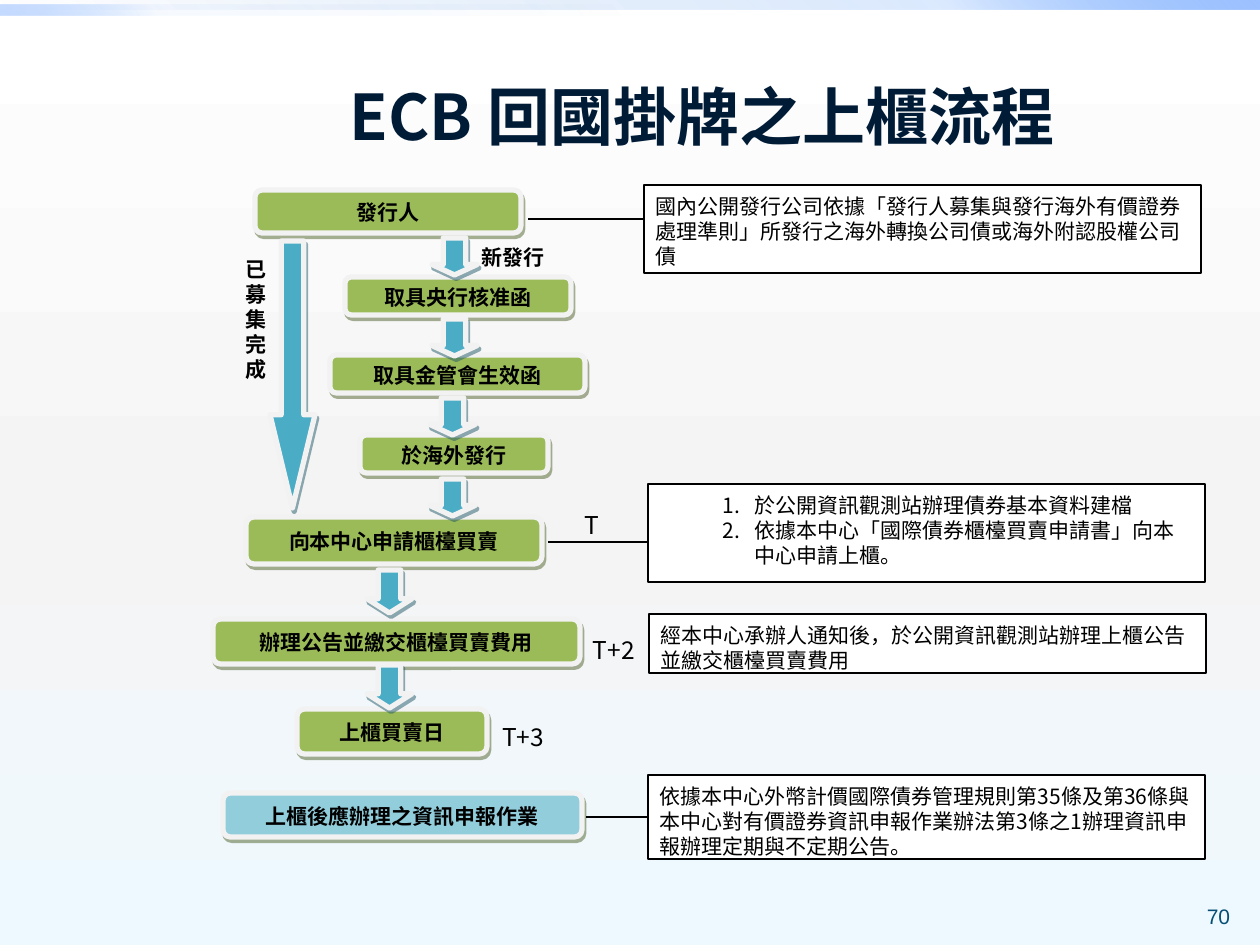
import dataclasses

import lxml.etree
import pptx
import pptx.dml.color
import pptx.enum.shapes
import pptx.enum.text
import pptx.oxml.ns
import pptx.util

SHAPE = pptx.enum.shapes.MSO_SHAPE
ALIGN = pptx.enum.text.PP_ALIGN
ANCHOR = pptx.enum.text.MSO_ANCHOR
qn = pptx.oxml.ns.qn


@dataclasses.dataclass(frozen=True)
class Theme:
    font: str = "Noto Sans CJK SC"
    number_font: str = "Arial"
    title_size: int = 36
    body_size: int = 12
    day_size: int = 14
    line_ratio: float = 1.19
    title: str = "001B36"
    number: str = "064E74"
    ink: str = "000000"
    paper: str = "FFFFFF"
    step: str = "9BBB59"
    follow_up: str = "92CDDC"
    arrow: str = "4BACC6"
    rim: str = "F2F2F2"
    step_shadow: str = "4E6128"
    arrow_shadow: str = "205867"
    backdrop: tuple = ((0, "FFFFFF", 100), (55, "F4F4F4", 100), (100, "EEF9FF", 100))
    top_band: tuple = ((0, "0058B7", 0), (75, "4F95FF", 20), (100, "9EC2FF", 100))
    left_band: tuple = ((0, "0058B7", 0), (75, "4F95FF", 5), (100, "9EC2FF", 60))


THEME = Theme()


def px(length):
    return round(length * 914400 / 126)


def place(*lengths):
    return [px(length) for length in lengths]


def rgb(code):
    return pptx.dml.color.RGBColor.from_string(code)


def add_node(parent, tag, **attributes):
    node = lxml.etree.SubElement(parent, qn(tag))
    for name, value in attributes.items():
        node.set(name, str(value))
    return node


def add_color(parent, code, opacity):
    color = add_node(parent, "a:srgbClr", val=code)
    if opacity < 100:
        add_node(color, "a:alpha", val=opacity * 1000)


def set_gradient(fill, owner, stops, angle):
    fill.gradient()
    gradient = owner.find(".//" + qn("a:gradFill"))
    for child in list(gradient):
        gradient.remove(child)
    stop_list = add_node(gradient, "a:gsLst")
    for position, code, opacity in stops:
        add_color(add_node(stop_list, "a:gs", pos=position * 1000), code, opacity)
    add_node(gradient, "a:lin", ang=angle * 60000, scaled=0)


def set_shadow(shape, code):
    shape.shadow.inherit = False
    effects = shape._element.spPr.find(qn("a:effectLst"))
    shadow = add_node(effects, "a:outerShdw", blurRad=0, dist=pptx.util.Pt(2.2),
                      dir=63 * 60000, algn="ctr", rotWithShape=0)
    add_color(shadow, code, 50)


def write(frame, text, size=THEME.body_size, color=THEME.ink, font=THEME.font, bold=False,
          align=ALIGN.LEFT, anchor=ANCHOR.TOP, top=9, bottom=6, fixed=True, numbered=False):
    frame.word_wrap = True
    frame.vertical_anchor = anchor
    frame.margin_left = frame.margin_right = px(12)
    frame.margin_top, frame.margin_bottom = px(top), px(bottom)
    for index, line in enumerate(text.split("\n")):
        para = frame.add_paragraph() if index else frame.paragraphs[0]
        para.alignment = align
        if fixed:
            para.line_spacing = pptx.util.Pt(size * THEME.line_ratio)
        if numbered:
            para.level = 1
            properties = para._p.get_or_add_pPr()
            properties.set("marL", str(pptx.util.Inches(0.75)))
            properties.set("indent", str(pptx.util.Inches(-0.25)))
            add_node(properties, "a:buFont", typeface="+mj-lt")
            add_node(properties, "a:buAutoNum", type="arabicPeriod")
        span = para.add_run()
        span.text = line
        span.font.size = pptx.util.Pt(size)
        span.font.bold = bold
        span.font.color.rgb = rgb(color)
        span.font.name = font
        add_node(span._r.get_or_add_rPr(), "a:ea", typeface=font)


def add_band(slide, bounds, stops, angle):
    band = slide.shapes.add_shape(SHAPE.RECTANGLE, *place(*bounds))
    band.shadow.inherit = False
    band.line.fill.background()
    set_gradient(band.fill, band._element.spPr, stops, angle)


def add_block(slide, preset, bounds, fill, line, width):
    block = slide.shapes.add_shape(preset, *place(*bounds))
    block.shadow.inherit = False
    block.fill.solid()
    block.fill.fore_color.rgb = rgb(fill)
    block.line.color.rgb = rgb(line)
    block.line.width = pptx.util.Pt(width)
    return block


def add_step(slide, text, bounds, fill=THEME.step):
    step = add_block(slide, SHAPE.ROUNDED_RECTANGLE, bounds, fill, THEME.rim, 3)
    set_shadow(step, THEME.step_shadow)
    write(step.text_frame, text, bold=True, align=ALIGN.CENTER, anchor=ANCHOR.MIDDLE,
          top=2, bottom=0)


def add_arrow(slide, left, top, height, head):
    arrow = add_block(slide, SHAPE.DOWN_ARROW, (left, top, 45, height),
                      THEME.arrow, THEME.rim, 3)
    arrow.adjustments[1] = head
    set_shadow(arrow, THEME.arrow_shadow)


def add_note(slide, text, left, top, height, numbered=False):
    note = add_block(slide, SHAPE.RECTANGLE, (left, top, 557, height),
                     THEME.paper, THEME.ink, 0.75)
    write(note.text_frame, text, numbered=numbered)
    return note


def add_label(slide, text, bounds, **style):
    write(slide.shapes.add_textbox(*place(*bounds)).text_frame, text, **style)


def add_link(slide, start, end, level):
    link = slide.shapes.add_connector(pptx.enum.shapes.MSO_CONNECTOR.STRAIGHT,
                                      *place(start, level, end, level))
    link.line.color.rgb = rgb(THEME.ink)
    link.line.width = pptx.util.Pt(0.75)
    add_node(link._element.spPr, "a:effectLst")
    return link


def main():
    deck = pptx.Presentation()
    deck.slide_width, deck.slide_height = place(1260, 945)
    slide = deck.slides.add_slide(deck.slide_layouts[5])
    set_gradient(slide.background.fill, slide._element, THEME.backdrop, 90)
    add_band(slide, (0, 0, 1260, 10), THEME.top_band, 315)
    add_band(slide, (0, 5, 630, 10), THEME.left_band, 135)

    title = slide.shapes.title
    title.left, title.top, title.width, title.height = place(144, 55, 1116, 120)
    write(title.text_frame, "ECB 回國掛牌之上櫃流程", size=THEME.title_size, color=THEME.title,
          bold=True, align=ALIGN.CENTER, anchor=ANCHOR.MIDDLE, top=6, fixed=False)
    add_label(slide, "70", (1187, 869, 63, 66), color=THEME.number, font=THEME.number_font,
              align=ALIGN.CENTER, anchor=ANCHOR.BOTTOM, fixed=False)

    for text, bounds in (
        ("發行人", (255, 190, 266, 43)),
        ("取具央行核准函", (345, 277, 226, 38)),
        ("取具金管會生效函", (330, 355, 255, 38)),
        ("於海外發行", (360, 435, 188, 38)),
        ("向本中心申請櫃檯買賣", (246, 517, 296, 47)),
        ("辦理公告並繳交櫃檯買賣費用", (213, 619, 367, 45)),
        ("上櫃買賣日", (297, 709, 190, 45)),
    ):
        add_step(slide, text, bounds)
    add_step(slide, "上櫃後應辦理之資訊申報作業", (223, 793, 359, 44), fill=THEME.follow_up)

    add_arrow(slide, 270, 241, 267, 2.07)
    for left, top in ((432, 238), (432, 319), (430, 398), (430, 479)):
        add_arrow(slide, left, top, 37, 0.28)
    for top in (570, 665):
        add_arrow(slide, 367, top, 43, 0.33)

    add_note(slide, "國內公開發行公司依據「發行人募集與發行海外有價證券處理準則」"
             "所發行之海外轉換公司債或海外附認股權公司債", 644, 185, 88)
    add_note(slide, "於公開資訊觀測站辦理債券基本資料建檔\n"
             "依據本中心「國際債券櫃檯買賣申請書」向本中心申請上櫃。", 648, 484, 98, numbered=True)
    add_note(slide, "經本中心承辦人通知後，於公開資訊觀測站辦理上櫃公告並繳交櫃檯買賣費用", 649, 614, 59)
    reporting = add_note(slide, "依據本中心外幣計價國際債券管理規則第35條及第36條與本中心對有價證券"
                         "資訊申報作業辦法第3條之1辦理資訊申報辦理定期與不定期公告。", 648, 775, 84)

    add_link(slide, 528, 644, 219)
    add_link(slide, 548, 648, 542)
    add_link(slide, 586, 648, 817).end_connect(reporting, 1)

    for text, bounds in (("T", (573, 501, 60, 30)), ("T+2", (581, 626, 81, 33)),
                         ("T+3", (490, 713, 83, 37))):
        add_label(slide, text, bounds, size=THEME.day_size)
    add_label(slide, "新發行", (470, 236, 101, 34), bold=True)
    add_label(slide, "已募集完成", (234, 248, 57, 151), bold=True)
    deck.save("out.pptx")


if __name__ == "__main__":
    main()
